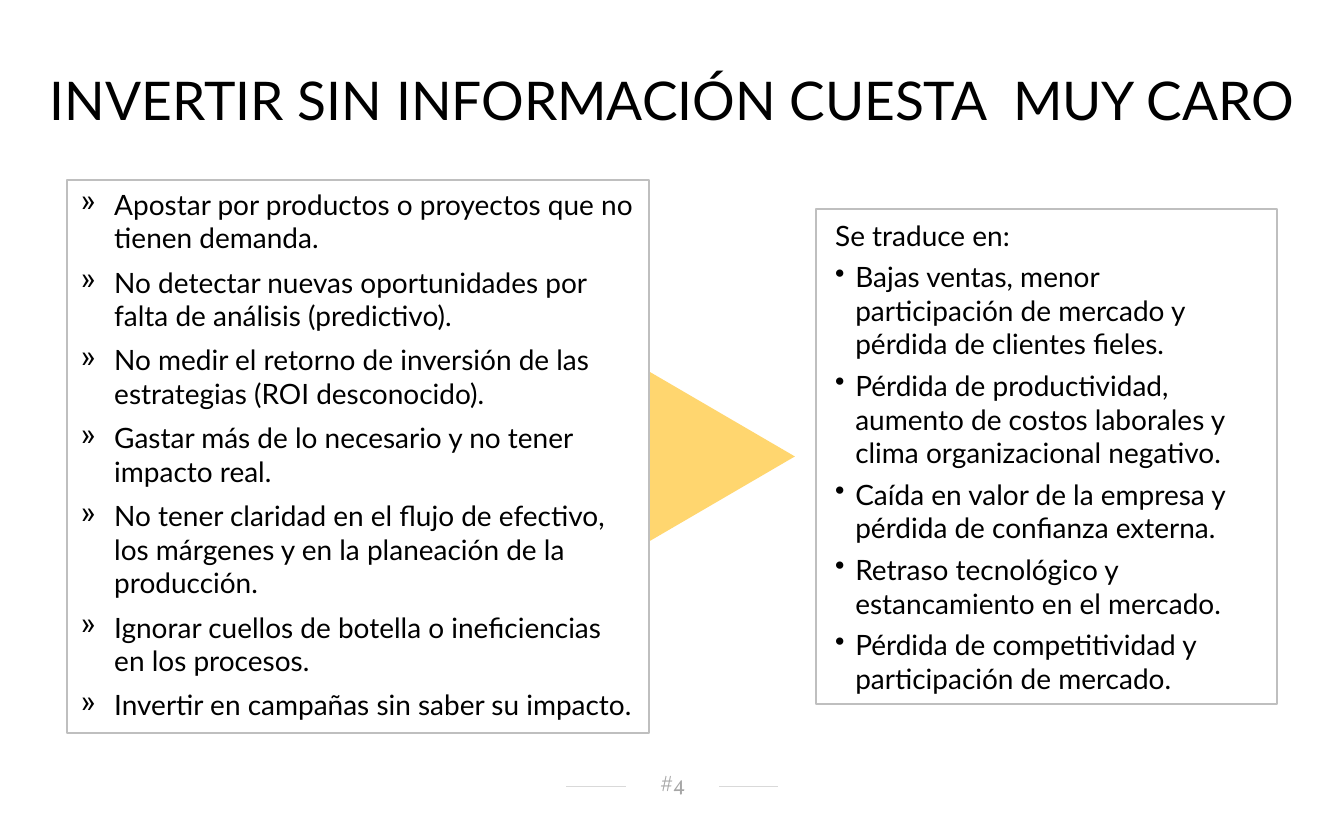
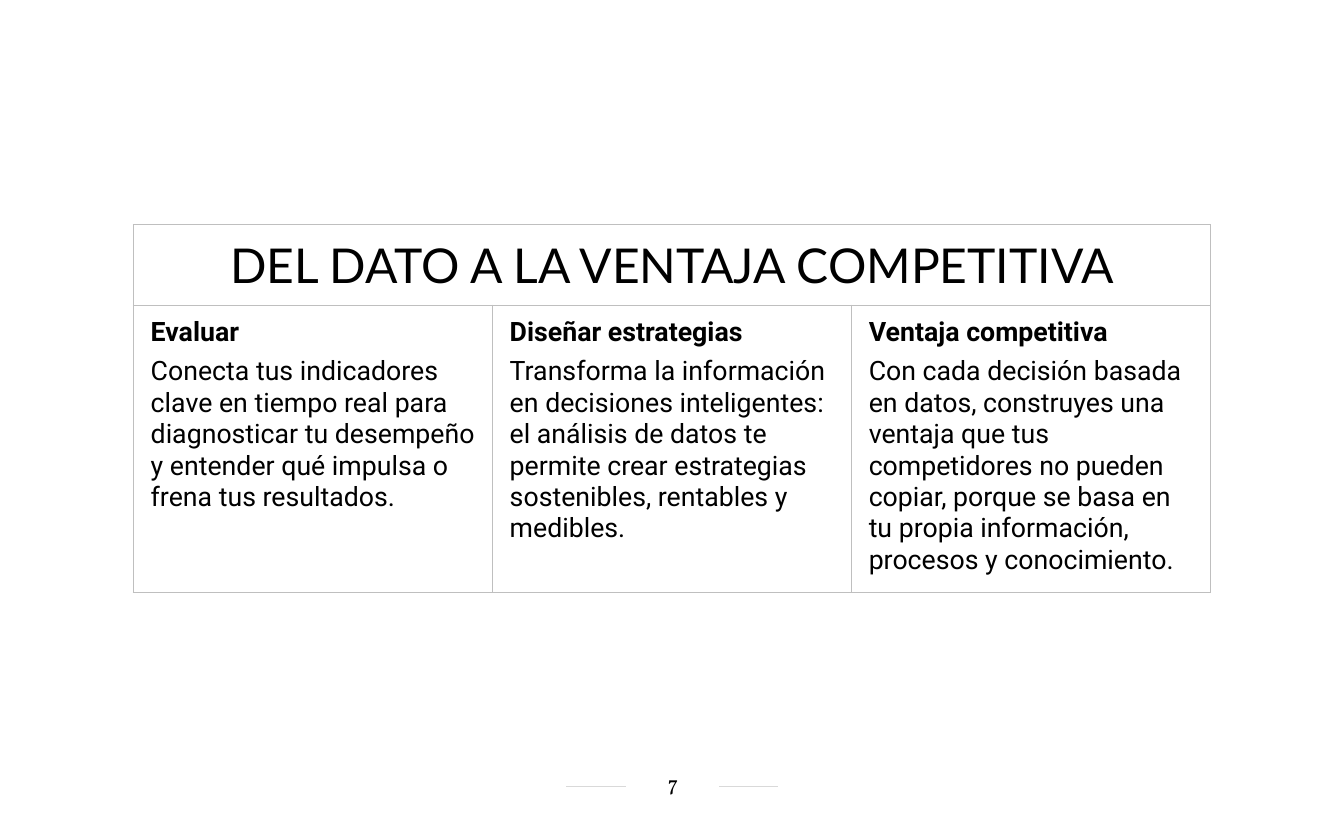
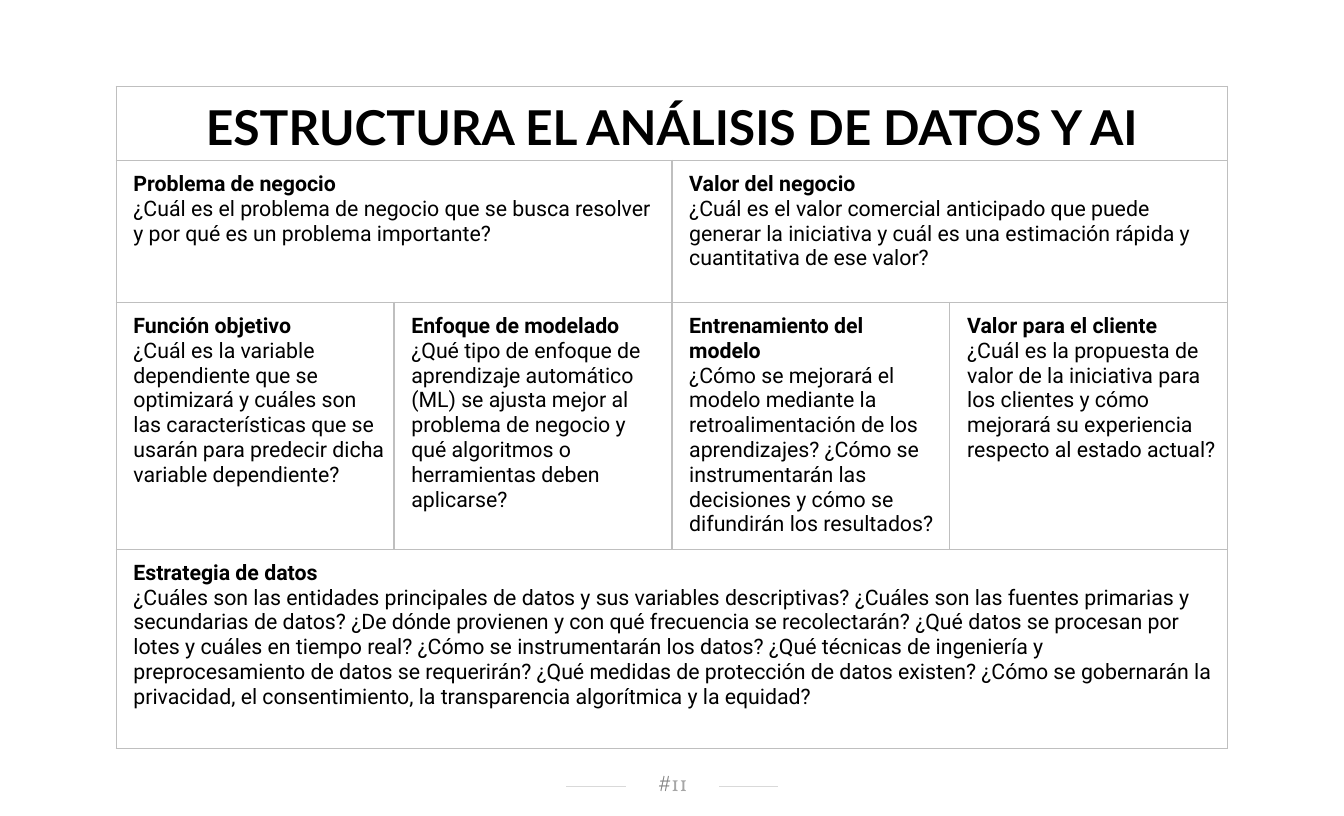
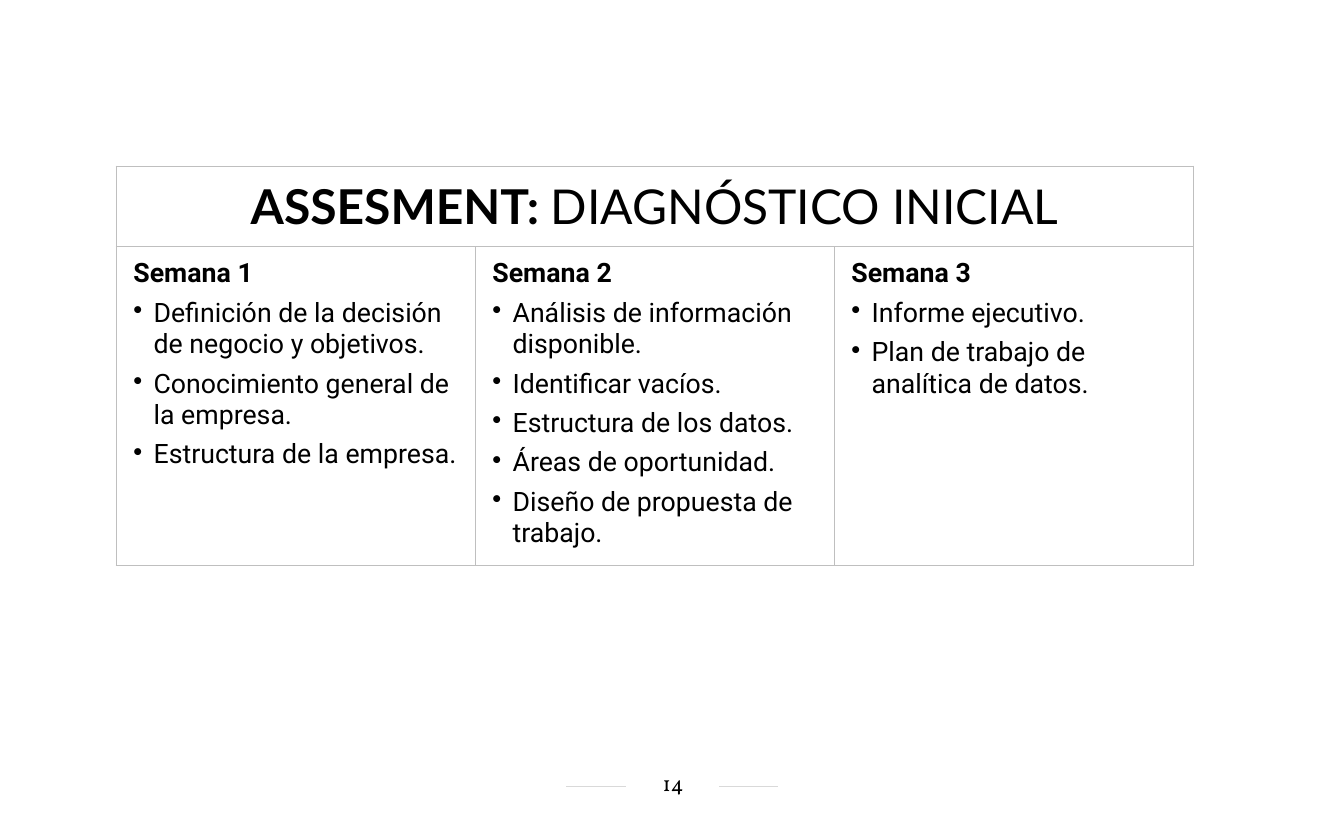
import pptx
import pptx.util
import pptx.dml.color
import pptx.enum.shapes
import pptx.enum.text
import pptx.oxml.ns
import lxml.etree

Inch = pptx.util.Inches
Pt = pptx.util.Pt
RGB = pptx.dml.color.RGBColor.from_string
Align = pptx.enum.text.PP_ALIGN
Anchor = pptx.enum.text.MSO_ANCHOR
Shape = pptx.enum.shapes.MSO_SHAPE
qn = pptx.oxml.ns.qn

hues = {"ink": "000000", "paper": "FFFFFF", "frame": "BFBFBF", "rule": "D9D9D9",
        "soft": "A6A6A6", "gray": "808080", "gold": "FFD66F"}

# The slide is a grid of 14 columns by 8.5 rows, one inch each
deck = pptx.Presentation()
deck.slide_width, deck.slide_height = Inch(14), Inch(8.5)


def style(par, parts, size, font):
    """Write the parts (text, bold, hue) as runs of one paragraph."""
    for text, bold, hue in parts:
        run = par.add_run()
        run.text = text
        run.font.size, run.font.name, run.font.bold = Pt(size), font, bold
        run.font.color.rgb = RGB(hues[hue])


def write(frame, head, lines, size, font, after, bold=True, mark=None, pad=0, hang=0):
    """Write a plain head, if any, and lines that carry the bullet mark."""
    frame.word_wrap = True
    texts = ([head] if head else []) + lines
    for n, text in enumerate(texts):
        par = frame.paragraphs[0] if n == 0 else frame.add_paragraph()
        lead = bool(head) and n == 0
        style(par, [(text, lead and bold, "ink")], size, font)
        par.alignment, par.space_after = Align.LEFT, Pt(after)
        dent = 0 if lead or not mark else hang
        props = par._p.get_or_add_pPr()
        props.set("marL", str(Inch(pad + dent)))
        props.set("indent", str(-Inch(dent)))
        if dent:
            lxml.etree.SubElement(props, qn("a:buChar")).set("char", mark)


# Slides with their shared footer: two rules around the number
feet = [[("#4", False, "soft")],
        [("7", False, "ink")],
        [("#", False, "gray"), ("11", False, "soft")],
        [("14", False, "ink")]]
for n, foot in enumerate(feet):
    slide = deck.slides.add_slide(deck.slide_layouts[5 if n == 0 else 6])
    for left, right in [(5.9, 6.52), (7.49, 8.1)]:
        rule = slide.shapes.add_connector(pptx.enum.shapes.MSO_CONNECTOR.STRAIGHT,
                                          Inch(left), Inch(8.19), Inch(right), Inch(8.19))
        rule.line.color.rgb, rule.line.width = RGB(hues["rule"]), Pt(0.75)
        lxml.etree.SubElement(rule._element.spPr, qn("a:effectLst"))
    frame = slide.shapes.add_textbox(Inch(6.51), Inch(8.04), Inch(0.98), Inch(0.26)).text_frame
    frame.word_wrap, frame.vertical_anchor = True, Anchor.MIDDLE
    frame.margin_left, frame.margin_right = Inch(0.12), Inch(0.1)
    frame.margin_top, frame.margin_bottom = Inch(0.02), Inch(0.05)
    frame.paragraphs[0].alignment = Align.CENTER
    style(frame.paragraphs[0], foot, 16, "Vollkorn")

# Slide 1: title
slide = deck.slides[0]
title = slide.shapes.title
title.left, title.top, title.width, title.height = 0, Inch(0.63), deck.slide_width, Inch(0.81)
frame = title.text_frame
frame.word_wrap, frame.vertical_anchor = True, Anchor.TOP
frame.auto_size = pptx.enum.text.MSO_AUTO_SIZE.NONE
frame.margin_left = frame.margin_right = Inch(0.14)
frame.margin_top = frame.margin_bottom = Inch(0.07)
frame.paragraphs[0].alignment = Align.CENTER
style(frame.paragraphs[0], [("INVERTIR SIN INFORMACIÓN CUESTA  MUY CARO", False, "ink")], 40, "Lato")

# Slide 1: arrow from causes to effects
arrow = slide.shapes.add_shape(Shape.ISOSCELES_TRIANGLE, Inch(6.58), Inch(3.97), Inch(1.83), Inch(1.57))
arrow.rotation = 90
arrow.shadow.inherit = False
arrow.fill.solid()
arrow.fill.fore_color.rgb = RGB(hues["gold"])
arrow.line.fill.background()

# Slide 1: framed lists
causes = ["Apostar por productos o proyectos que no tienen demanda.",
          "No detectar nuevas oportunidades por falta de análisis (predictivo).",
          "No medir el retorno de inversión de las estrategias (ROI desconocido).",
          "Gastar más de lo necesario y no tener impacto real.",
          "No tener claridad en el flujo de efectivo, los márgenes y en la planeación de la producción.",
          "Ignorar cuellos de botella o ineficiencias en los procesos.",
          "Invertir en campañas sin saber su impacto."]
effects = ["Bajas ventas, menor participación de mercado y pérdida de clientes fieles.",
           "Pérdida de productividad, aumento de costos laborales y clima organizacional negativo.",
           "Caída en valor de la empresa y pérdida de confianza externa.",
           "Retraso tecnológico y estancamiento en el mercado.",
           "Pérdida de competitividad y participación de mercado."]
boxes = [((8.5, 2.18, 4.8, 5.15), (0.2, 0.16), Anchor.MIDDLE, "Se traduce en:", effects, 6, "•", 0.21),
         ((0.7, 1.88, 6.06, 5.76), (0.14, 0.14), Anchor.TOP, None, causes, 8, "»", 0.35)]
for place, sides, anchor, head, lines, after, mark, hang in boxes:
    box = slide.shapes.add_shape(Shape.RECTANGLE, *[Inch(v) for v in place])
    box.shadow.inherit = False
    box.fill.solid()
    box.fill.fore_color.rgb = RGB(hues["paper"])
    box.line.color.rgb, box.line.width = RGB(hues["frame"]), Pt(1.5)
    frame = box.text_frame
    frame.vertical_anchor = anchor
    frame.margin_left, frame.margin_right = [Inch(v) for v in sides]
    frame.margin_top = frame.margin_bottom = Inch(0.07)
    write(frame, head, lines, 21, "Lato", after, False, mark, hang=hang)

# Slides 2 to 4: table rows, each cell as (columns spanned, head, lines)
path_rows = [[
    (1, "Evaluar", ["Conecta tus indicadores clave en tiempo real para diagnosticar tu desempeño "
                    "y entender qué impulsa o frena tus resultados."]),
    (1, "Diseñar estrategias", ["Transforma la información en decisiones inteligentes: el análisis de datos "
                                "te permite crear estrategias sostenibles, rentables y medibles."]),
    (1, "Ventaja competitiva", ["Con cada decisión basada en datos, construyes una ventaja que tus "
                                "competidores no pueden copiar, porque se basa en tu propia información, "
                                "procesos y conocimiento."])]]
plan_rows = [
    [(2, "Problema de negocio", ["¿Cuál es el problema de negocio que se busca resolver y por qué es un "
                                 "problema importante?"]),
     (2, "Valor del negocio", ["¿Cuál es el valor comercial anticipado que puede generar la iniciativa y "
                               "cuál es una estimación rápida y cuantitativa de ese valor?"])],
    [(1, "Función objetivo", ["¿Cuál es la variable dependiente que se optimizará y cuáles son las "
                              "características que se usarán para predecir dicha variable dependiente?"]),
     (1, "Enfoque de modelado", ["¿Qué tipo de enfoque de aprendizaje automático (ML) se ajusta mejor al "
                                 "problema de negocio y qué algoritmos o herramientas deben aplicarse?"]),
     (1, "Entrenamiento del modelo", ["¿Cómo se mejorará el modelo mediante la retroalimentación de los "
                                      "aprendizajes? ¿Cómo se instrumentarán las decisiones y cómo se "
                                      "difundirán los resultados?"]),
     (1, "Valor para el cliente", ["¿Cuál es la propuesta de valor de la iniciativa para los clientes y "
                                   "cómo mejorará su experiencia respecto al estado actual?"])],
    [(4, "Estrategia de datos", [
        "¿Cuáles son las entidades principales de datos y sus variables descriptivas? ¿Cuáles son las "
        "fuentes primarias y secundarias de datos? ¿De dónde provienen y con qué frecuencia se "
        "recolectarán? ¿Qué datos se procesan por lotes y cuáles en tiempo real? ¿Cómo se instrumentarán "
        "los datos? ¿Qué técnicas de ingeniería y preprocesamiento de datos se requerirán? ¿Qué medidas de "
        "protección de datos existen? ¿Cómo se gobernarán la privacidad, el consentimiento, la "
        "transparencia algorítmica y la equidad?"])]]
week_rows = [[
    (1, "Semana 1", ["Definición de la decisión de negocio y objetivos.",
                     "Conocimiento general de la empresa.", "Estructura de la empresa."]),
    (1, "Semana 2", ["Análisis de información disponible.", "Identificar vacíos.",
                     "Estructura de los datos.", "Áreas de oportunidad.",
                     "Diseño de propuesta de trabajo."]),
    (1, "Semana 3", ["Informe ejecutivo.", "Plan de trabajo de analítica de datos."])]]

# Each table: left, top, width, row heights, title parts, rows, size, space after, bottom margin, mark
tables = [
    (1.39, 2.34, 11.22, [0.83, 2.94], [("DEL DATO A LA VENTAJA COMPETITIVA", False, "ink")],
     path_rows, 20, 6, 0.12, None),
    (1.21, 0.9, 11.58, [0.77, 1.48, 2.57, 2.08], [("ESTRUCTURA EL ANÁLISIS DE DATOS Y AI", True, "ink")],
     plan_rows, 16, 0, 0.05, None),
    (1.21, 1.73, 11.22, [0.83, 3.27], [("ASSESMENT: ", True, "ink"), ("DIAGNÓSTICO INICIAL", False, "ink")],
     week_rows, 20, 6, 0.12, "•")]
for n, (left, top, width, highs, name, rows, size, after, foot, mark) in enumerate(tables, 1):
    cols = sum(span for span, head, lines in rows[0])
    grid = deck.slides[n].shapes.add_table(len(highs), cols, Inch(left), Inch(top),
                                           Inch(width), Inch(sum(highs))).table
    grid.first_row = grid.horz_banding = False
    for row, high in zip(grid.rows, highs):
        row.height = Inch(high)

    # Thin borders, no fill
    for cell in grid.iter_cells():
        props = cell._tc.get_or_add_tcPr()
        for side in ("a:lnL", "a:lnR", "a:lnT", "a:lnB"):
            edge = lxml.etree.SubElement(props, qn(side), w=str(Pt(1)))
            fill = lxml.etree.SubElement(edge, qn("a:solidFill"))
            lxml.etree.SubElement(fill, qn("a:srgbClr"), val=hues["frame"])
        cell.fill.background()
        cell.margin_left = cell.margin_right = Inch(0.1)
        cell.margin_top, cell.margin_bottom = Inch(0.12), Inch(foot)

    # Title row
    cell = grid.cell(0, 0)
    cell.merge(grid.cell(0, cols - 1))
    cell.vertical_anchor = Anchor.MIDDLE
    cell.text_frame.paragraphs[0].alignment = Align.CENTER
    style(cell.text_frame.paragraphs[0], name, 36, "Lato")

    # Body rows
    for r, row in enumerate(rows, 1):
        col = 0
        for span, head, lines in row:
            cell = grid.cell(r, col)
            if span > 1:
                cell.merge(grid.cell(r, col + span - 1))
            write(cell.text_frame, head, lines, size, "Roboto", after, mark=mark, pad=0.08, hang=0.21)
            col += span

deck.save("out.pptx")
